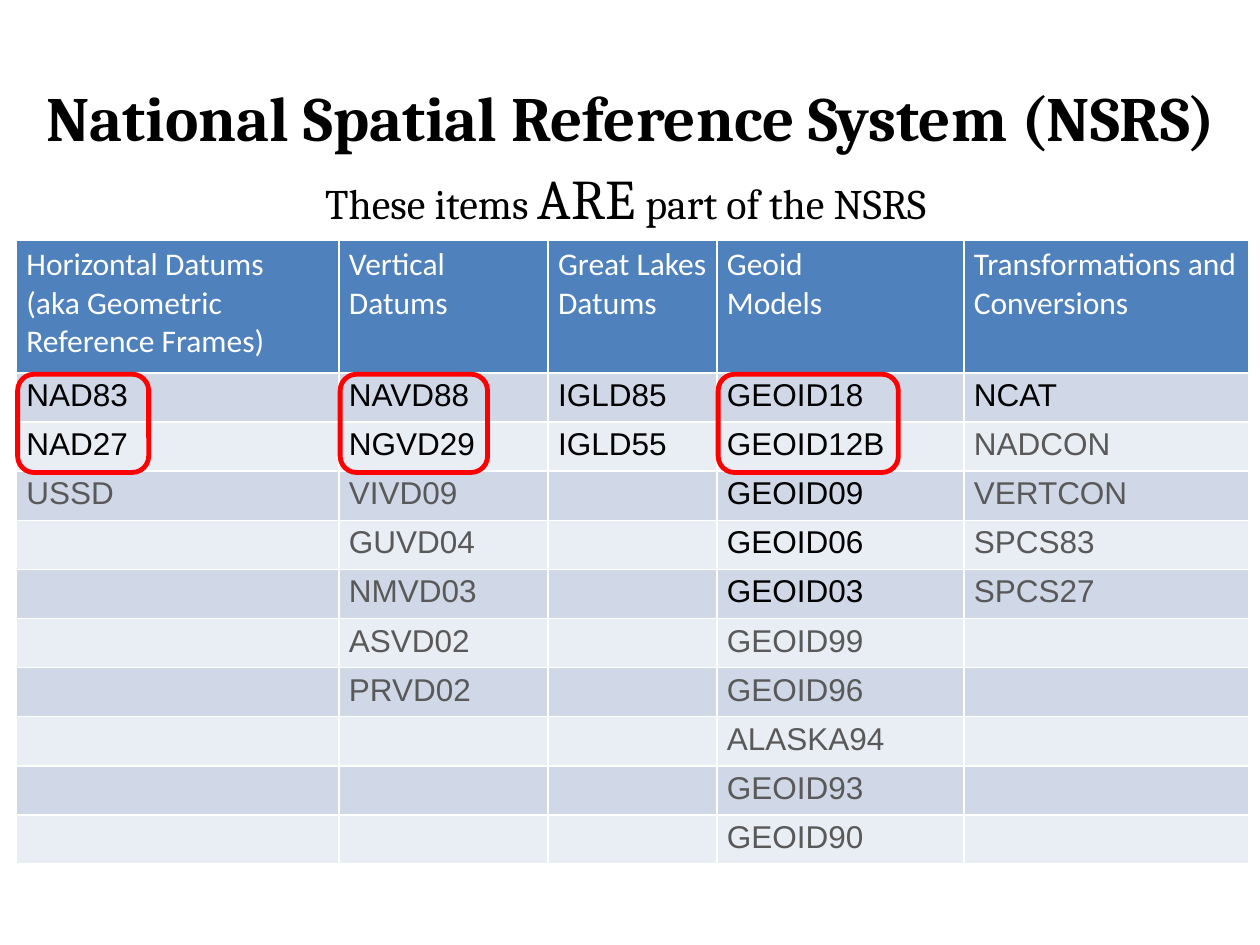
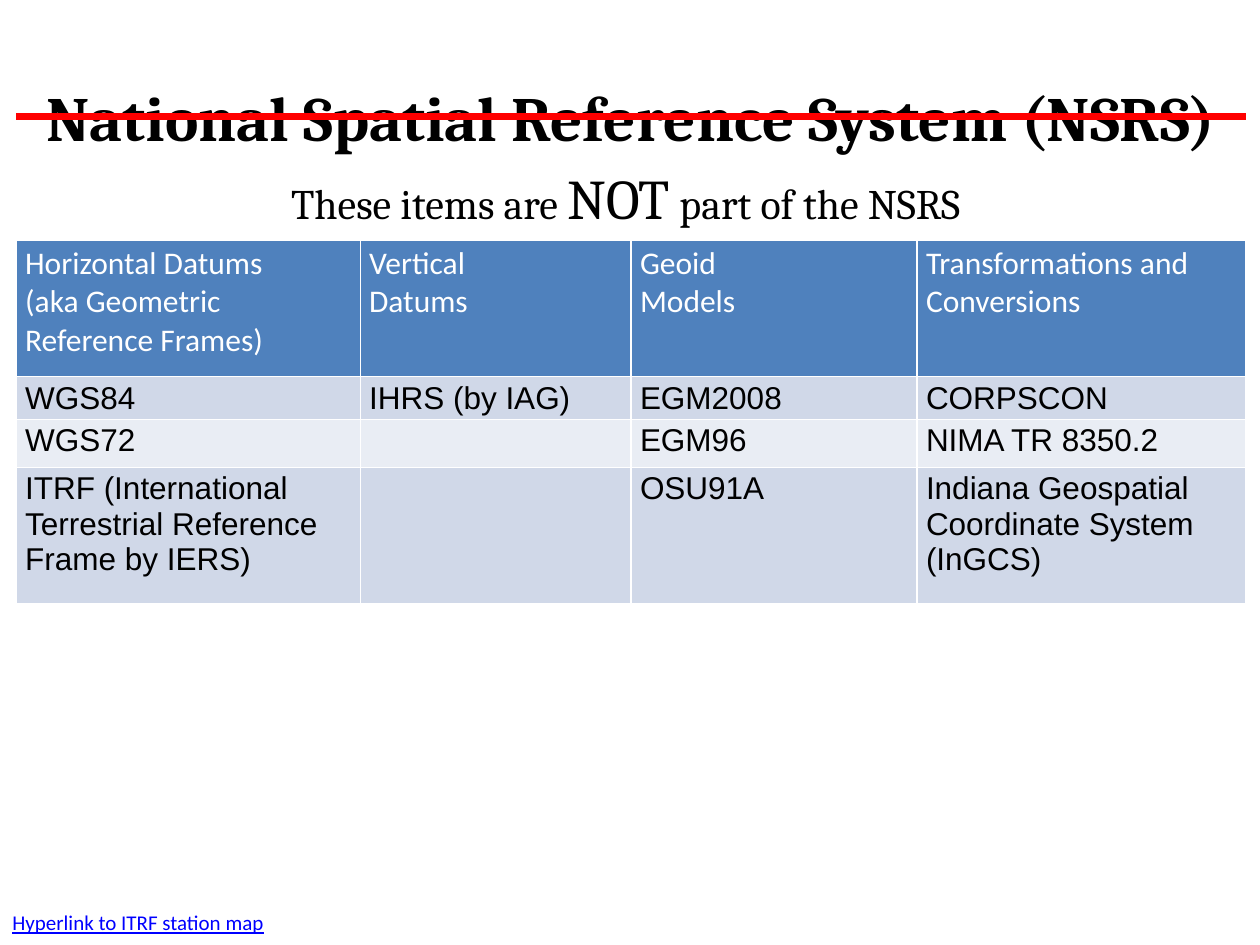
from itertools import accumulate

from lxml.etree import SubElement
from pptx import Presentation
from pptx.dml.color import RGBColor
from pptx.enum.shapes import MSO_CONNECTOR as Connector, MSO_SHAPE as Shape
from pptx.enum.text import MSO_ANCHOR as Anchor, MSO_AUTO_SIZE as AutoSize, PP_ALIGN as Align
from pptx.oxml.ns import qn
from pptx.util import Inches, Pt

BLACK = RGBColor(0x00, 0x00, 0x00)
GRAY = RGBColor(0x59, 0x59, 0x59)
WHITE = RGBColor(0xFF, 0xFF, 0xFF)
RED = RGBColor(0xFF, 0x00, 0x00)
LINK_BLUE = RGBColor(0x00, 0x00, 0xFF)
HEADER_BLUE = RGBColor(0x4F, 0x81, 0xBD)
BANDS = (RGBColor(0xD0, 0xD8, 0xE8), RGBColor(0xE9, 0xED, 0xF4))

LEFT, CONTENT_WIDTH = 0.13, 9.76
TABLE_TOP = 1.91
TITLE_TOP, TITLE_HEIGHT = 0.3, 1.25

TITLE_FONT = {"name": "Cambria", "size": Pt(36), "bold": True}
SUBTITLE_FONT = {"name": "Cambria", "size": Pt(24)}
EMPHASIS_FONT = {"name": "Cambria", "size": Pt(32)}
HEADER_FONT = {"name": "Calibri", "size": Pt(18), "bold": False}
ITEM_FONT = {"name": "Arial", "size": Pt(18), "bold": False}
LINK_FONT = {"name": "Calibri", "size": Pt(12), "underline": True}

HORIZONTAL = "Horizontal Datums\n(aka Geometric Reference Frames)"
VERTICAL = "Vertical\nDatums"
GEOID = "Geoid\nModels"
CONVERSIONS = "Transformations and Conversions"

# Each column: heading, width, current items, superseded items
NSRS_COLUMNS = [
    (HORIZONTAL, 2.56, ["NAD83", "NAD27"], ["USSD"]),
    (VERTICAL, 1.66, ["NAVD88", "NGVD29"],
     ["VIVD09", "GUVD04", "NMVD03", "ASVD02", "PRVD02"]),
    ("Great Lakes Datums", 1.34, ["IGLD85", "IGLD55"], []),
    (GEOID, 1.96, ["GEOID18", "GEOID12B", "GEOID09", "GEOID06", "GEOID03"],
     ["GEOID99", "GEOID96", "ALASKA94", "GEOID93", "GEOID90"]),
    (CONVERSIONS, 2.26, ["NCAT"], ["NADCON", "VERTCON", "SPCS83", "SPCS27"]),
]
OUTSIDE_COLUMNS = [
    (HORIZONTAL, 2.73,
     ["WGS84", "WGS72", "ITRF (International Terrestrial Reference Frame by IERS)"], []),
    (VERTICAL, 2.15, ["IHRS (by IAG)"], []),
    (GEOID, 2.27, ["EGM2008", "EGM96", "OSU91A"], []),
    (CONVERSIONS, 2.61,
     ["CORPSCON", "NIMA TR 8350.2", "Indiana Geospatial Coordinate System (InGCS)"], []),
]
NSRS_ROWS = [1.05] + [0.39] * 10
OUTSIDE_ROWS = [1.08, 0.34, 0.38, 1.08]
MARKED_COLUMNS = {0: 1.04, 1: 1.17, 3: 1.43}


def inches(*lengths):
    return [Inches(length) for length in lengths]


def style(font, formats, color):
    for name, value in formats.items():
        setattr(font, name, value)
    font.color.rgb = color


def add_span(para, text, formats, color=BLACK):
    span = para.add_run()
    span.text = text
    style(span.font, formats, color)


def add_titled_page(deck):
    page = deck.slides.add_slide(deck.slide_layouts[5])
    title = page.shapes.title
    title.left, title.top, title.width, title.height = inches(
        LEFT, TITLE_TOP, CONTENT_WIDTH, TITLE_HEIGHT)
    title.text_frame.vertical_anchor = Anchor.MIDDLE
    para = title.text_frame.paragraphs[0]
    para.alignment = Align.CENTER
    add_span(para, "National Spatial Reference System (NSRS)", TITLE_FONT)
    return page


def add_text(page, place, spans, align, wrap=True):
    frame = page.shapes.add_textbox(*inches(*place)).text_frame
    frame.word_wrap = wrap
    frame.auto_size = AutoSize.SHAPE_TO_FIT_TEXT
    para = frame.paragraphs[0]
    para.alignment = align
    for text, formats, color in spans:
        add_span(para, text, formats, color)


def add_subtitle(page, opening, emphasis):
    spans = [(opening, SUBTITLE_FONT, BLACK), (emphasis, EMPHASIS_FONT, BLACK),
             (" part of the NSRS", SUBTITLE_FONT, BLACK)]
    add_text(page, (LEFT, 1.25, 9.67, 0.64), spans, Align.CENTER)


def fill_cell(cell, text, fill, formats, color, side, edge):
    cell.fill.solid()
    cell.fill.fore_color.rgb = fill
    cell.margin_left = cell.margin_right = Inches(side)
    cell.margin_top = cell.margin_bottom = Inches(edge)
    cell.text = text
    for para in cell.text_frame.paragraphs:
        style(para.font, formats, color)
        for span in para.runs:
            style(span.font, formats, color)


def add_items_table(page, columns, heights, side, edge):
    table = page.shapes.add_table(
        len(heights), len(columns),
        *inches(LEFT, TABLE_TOP, CONTENT_WIDTH, sum(heights))).table
    for row, height in zip(table.rows, heights):
        row.height = Inches(height)
    for index, (heading, width, current, superseded) in enumerate(columns):
        table.columns[index].width = Inches(width)
        fill_cell(table.cell(0, index), heading, HEADER_BLUE, HEADER_FONT, WHITE, side, edge)
        items = current + superseded
        for row in range(1, len(heights)):
            text = items[row - 1] if row <= len(items) else ""
            color = BLACK if row <= len(current) else GRAY
            fill_cell(table.cell(row, index), text, BANDS[(row - 1) % 2],
                      ITEM_FONT, color, side, edge)


def mark_main_items(page):
    lefts = list(accumulate((column[1] for column in NSRS_COLUMNS), initial=LEFT))
    top, height = TABLE_TOP + NSRS_ROWS[0] + 0.01, sum(NSRS_ROWS[1:3])
    for index, width in MARKED_COLUMNS.items():
        mark = page.shapes.add_shape(
            Shape.ROUNDED_RECTANGLE, *inches(lefts[index] + 0.01, top, width, height))
        mark.shadow.inherit = False
        mark.fill.background()
        mark.line.color.rgb = RED
        mark.line.width = Pt(2.75)


def strike_title(page):
    middle = TITLE_TOP + TITLE_HEIGHT / 2
    strike = page.shapes.add_connector(
        Connector.STRAIGHT, *inches(LEFT, middle, LEFT + CONTENT_WIDTH, middle))
    strike.line.color.rgb = RED
    strike.line.width = Pt(4)
    SubElement(strike._element.spPr, qn("a:effectLst"))


def main():
    deck = Presentation()
    deck.slide_width, deck.slide_height = inches(10, 7.5)

    page = add_titled_page(deck)
    add_subtitle(page, "These items ", "ARE")
    add_items_table(page, NSRS_COLUMNS, NSRS_ROWS, 0.08, 0.04)
    mark_main_items(page)

    page = add_titled_page(deck)
    add_items_table(page, OUTSIDE_COLUMNS, OUTSIDE_ROWS, 0.07, 0.03)
    add_subtitle(page, "These items are ", "NOT")
    add_text(page, (0, 7.17, 2.22, 0.3),
             [("Hyperlink to ITRF station map", LINK_FONT, LINK_BLUE)], Align.LEFT, wrap=False)
    strike_title(page)

    deck.save("out.pptx")


if __name__ == "__main__":
    main()
